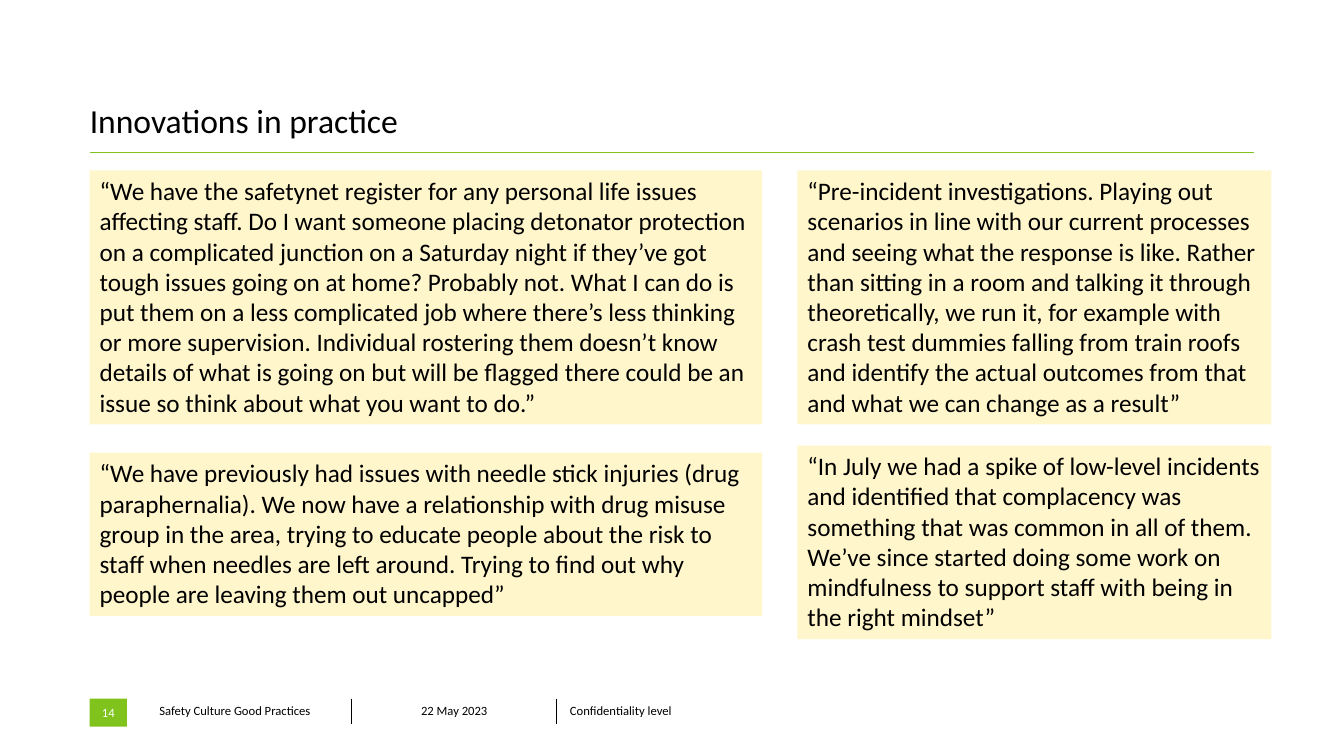
from dataclasses import dataclass

from lxml.etree import SubElement
from pptx import Presentation
from pptx.dml.color import RGBColor
from pptx.enum.shapes import MSO_CONNECTOR as Connector, MSO_SHAPE as Shape
from pptx.enum.text import MSO_ANCHOR as Anchor, MSO_AUTO_SIZE as AutoSize, PP_ALIGN as Align
from pptx.oxml.ns import qn
from pptx.util import Inches, Pt


@dataclass(frozen=True)
class Theme:
    font: str = "Calibri"
    text: str = "000000"
    inverse: str = "FFFFFF"
    accent: str = "7FC31C"
    quote: str = "FFF6CC"
    title_size: int = 24
    quote_size: int = 18
    footer_size: int = 9


THEME = Theme()
LEFT = 0.89
FOOTER_TOP = 6.93
LEFT_COLUMN = (LEFT, 6.67)
RIGHT_COLUMN = (7.91, 4.7)

QUOTES = [
    (LEFT_COLUMN, 1.69, 2.52,
     "“We have the safetynet register for any personal life issues affecting staff. "
     "Do I want someone placing detonator protection on a complicated junction on a "
     "Saturday night if they’ve got tough issues going on at home? Probably not. What I "
     "can do is put them on a less complicated job where there’s less thinking or more "
     "supervision. Individual rostering them doesn’t know details of what is going on but "
     "will be flagged there could be an issue so think about what you want to do.”"),
    (LEFT_COLUMN, 4.49, 1.62,
     "“We have previously had issues with needle stick injuries (drug paraphernalia). We "
     "now have a relationship with drug misuse group in the area, trying to educate people "
     "about the risk to staff when needles are left around. Trying to find out why people "
     "are leaving them out uncapped”"),
    (RIGHT_COLUMN, 1.69, 2.52,
     "“Pre-incident investigations. Playing out scenarios in line with our current "
     "processes and seeing what the response is like. Rather than sitting in a room and "
     "talking it through theoretically, we run it, for example with crash test dummies "
     "falling from train roofs and identify the actual outcomes from that and what we can "
     "change as a result”"),
    (RIGHT_COLUMN, 4.42, 1.92,
     "“In July we had a spike of low-level incidents and identified that complacency was "
     "something that was common in all of them. We’ve since started doing some work on "
     "mindfulness to support staff with being in the right mindset”"),
]

FOOTER = [
    ("Safety Culture Good Practices", Align.LEFT),
    ("22 May 2023", Align.CENTER),
    ("Confidentiality level", Align.LEFT),
]


def rgb(color):
    return RGBColor.from_string(color)


def write(frame, text, size, color=THEME.text, align=Align.LEFT):
    para = frame.paragraphs[0]
    para.alignment = align
    span = para.add_run()
    span.text = text
    span.font.name = THEME.font
    span.font.size = Pt(size)
    span.font.color.rgb = rgb(color)


def set_insets(holder, horizontal, vertical):
    holder.margin_left = holder.margin_right = Inches(horizontal)
    holder.margin_top = holder.margin_bottom = Inches(vertical)


def add_title(page, text):
    title = page.shapes.title
    title.left, title.top = Inches(LEFT), Inches(0.5)
    title.width, title.height = Inches(9.16), Inches(0.89)
    frame = title.text_frame
    frame.vertical_anchor = Anchor.BOTTOM
    frame.auto_size = AutoSize.NONE
    set_insets(frame, 0, 0)
    write(frame, text, THEME.title_size)


def add_rule(page, left, right, top):
    rule = page.shapes.add_connector(
        Connector.STRAIGHT, Inches(left), Inches(top), Inches(right), Inches(top))
    rule.line.color.rgb = rgb(THEME.accent)
    rule.line.width = Pt(0.6)
    SubElement(rule._element.spPr, qn("a:effectLst"))


def add_box(page, left, top, width, height, fill):
    box = page.shapes.add_shape(
        Shape.RECTANGLE, Inches(left), Inches(top), Inches(width), Inches(height))
    box.shadow.inherit = False
    box.fill.solid()
    box.fill.fore_color.rgb = rgb(fill)
    box.line.fill.background()
    box.text_frame.word_wrap = True
    return box


def add_quote(page, column, top, height, text):
    left, width = column
    frame = add_box(page, left, top, width, height, THEME.quote).text_frame
    frame.vertical_anchor = Anchor.TOP
    frame.auto_size = AutoSize.SHAPE_TO_FIT_TEXT
    write(frame, text, THEME.quote_size)


def add_page_number(page, number):
    frame = add_box(page, LEFT, FOOTER_TOP, 0.37, 0.28, THEME.accent).text_frame
    frame.vertical_anchor = Anchor.MIDDLE
    set_insets(frame, 0.04, 0.04)
    write(frame, number, THEME.footer_size, THEME.inverse, Align.CENTER)


def set_borders(cell, visible):
    properties = cell._tc.get_or_add_tcPr()
    for side in ("lnL", "lnR", "lnT", "lnB"):
        line = SubElement(properties, qn(f"a:{side}"), w=str(Pt(1)))
        if side in visible:
            fill = SubElement(line, qn("a:solidFill"))
            SubElement(fill, qn("a:srgbClr"), val=THEME.text)
        else:
            SubElement(line, qn("a:noFill"))


def add_footer(page, entries):
    table = page.shapes.add_table(
        1, len(entries), Inches(1.45), Inches(FOOTER_TOP), Inches(6.11), Inches(0.25)).table
    table.first_row = table.horz_banding = False
    for index, (text, align) in enumerate(entries):
        cell = table.cell(0, index)
        visible = set()
        if index > 0:
            visible.add("lnL")
        if index < len(entries) - 1:
            visible.add("lnR")
        set_borders(cell, visible)
        cell.fill.background()
        cell.vertical_anchor = Anchor.MIDDLE
        set_insets(cell, 0.13, 0.05)
        write(cell.text_frame, text, THEME.footer_size, align=align)


def main():
    deck = Presentation()
    deck.slide_width, deck.slide_height = Inches(13.33), Inches(7.5)
    page = deck.slides.add_slide(deck.slide_layouts[5])
    add_footer(page, FOOTER)
    add_rule(page, LEFT, 12.44, 1.51)
    add_title(page, "Innovations in practice")
    add_page_number(page, "14")
    for quote in QUOTES:
        add_quote(page, *quote)
    deck.save("out.pptx")


if __name__ == "__main__":
    main()
